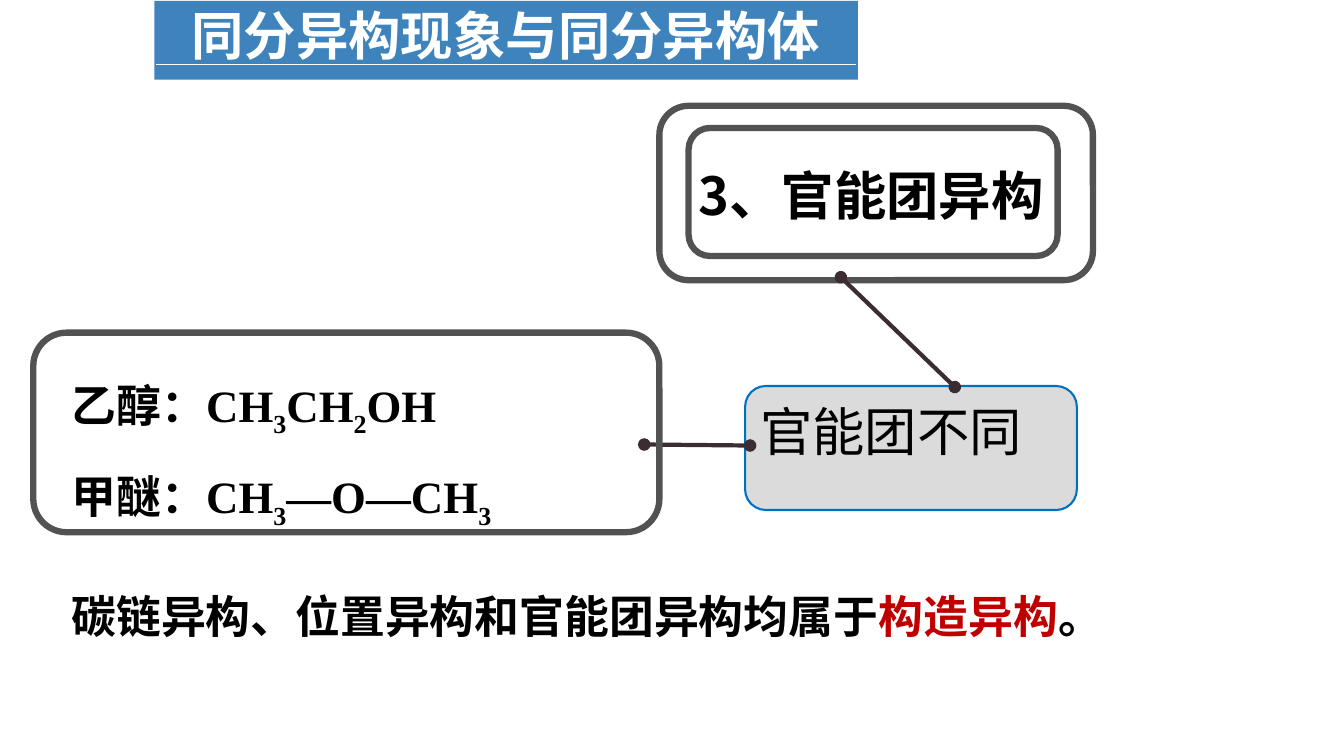
"""Build the slide on functional group isomers."""
import lxml.etree
import pptx
import pptx.dml.color
import pptx.enum.shapes
import pptx.enum.text
import pptx.oxml.ns
import pptx.util

Inches = pptx.util.Inches
Pt = pptx.util.Pt
RGBColor = pptx.dml.color.RGBColor
Shape = pptx.enum.shapes.MSO_SHAPE
Align = pptx.enum.text.PP_ALIGN
qn = pptx.oxml.ns.qn

BLUE = RGBColor(0x3F, 0x83, 0xBC)
EDGE = RGBColor(0x00, 0x70, 0xC0)
PALE = RGBColor(0xDB, 0xDB, 0xDB)
GRAY = RGBColor(0x52, 0x52, 0x52)
DARK = RGBColor(0x3B, 0x2D, 0x32)
RED = RGBColor(0xC0, 0x00, 0x00)
BLACK = RGBColor(0, 0, 0)
WHITE = RGBColor(255, 255, 255)
SANS = "Noto Sans CJK SC"
SERIF = "Times New Roman"


def place(item, left, top, width, height):
    item.left, item.top = Inches(left), Inches(top)
    item.width, item.height = Inches(width), Inches(height)


def write(para, text, size=32, font=SANS, color=BLACK, bold=True, sub=False):
    run = para.add_run()
    run.text = text
    run.font.size, run.font.bold = Pt(size), bold
    run.font.name, run.font.color.rgb = font, color
    props = run.font._element
    lxml.etree.SubElement(props, qn("a:ea")).set("typeface", SANS)
    if sub:
        props.set("baseline", "-25000")


def setup(frame, left=0.1, top=0.05):
    frame.word_wrap = True
    frame.auto_size = pptx.enum.text.MSO_AUTO_SIZE.NONE
    frame.vertical_anchor = pptx.enum.text.MSO_ANCHOR.TOP
    frame.margin_left, frame.margin_top = Inches(left), Inches(top)
    return frame.paragraphs[0]


def add_label(slide, area, *parts, **style):
    box = slide.shapes.add_textbox(0, 0, 0, 0)
    place(box, *area)
    para = setup(box.text_frame)
    for text, color in parts:
        write(para, text, color=color, **style)


def add_round(slide, area, fill=None, line=GRAY, width=4.5):
    box = slide.shapes.add_shape(Shape.ROUNDED_RECTANGLE, 0, 0, 0, 0)
    place(box, *area)
    box.shadow.inherit = False
    if fill is None:
        box.fill.background()
    else:
        box.fill.solid()
        box.fill.fore_color.rgb = fill
    box.line.color.rgb, box.line.width = line, Pt(width)
    return box


def add_line(slide, start, end, color=DARK, width=3, dots=True):
    ends = [Inches(value) for value in start + end]
    straight = pptx.enum.shapes.MSO_CONNECTOR.STRAIGHT
    link = slide.shapes.add_connector(straight, *ends)
    link.line.color.rgb, link.line.width = color, Pt(width)
    if dots:
        for tag in ("a:headEnd", "a:tailEnd"):
            tip = lxml.etree.SubElement(link.line._get_or_add_ln(), qn(tag))
            tip.set("type", "oval")
    lxml.etree.SubElement(link._element.spPr, qn("a:effectLst"))


def set_title(slide, text):
    title = slide.shapes.title
    place(title, 1.53, 0.01, 6.98, 0.78)
    title.fill.solid()
    title.fill.fore_color.rgb = BLUE
    para = setup(title.text_frame, top=0.02)
    para.alignment = Align.CENTER
    write(para, text, size=37.4, color=WHITE)
    add_line(slide, (1.55, 0.64), (8.49, 0.64), WHITE, 0.75, dots=False)


def set_list(slide, rows):
    body = slide.placeholders[1]
    place(body, 0.61, 3.39, 5.9, 1.72)
    frame = body.text_frame
    first = setup(frame)
    for index, row in enumerate(rows):
        para = frame.add_paragraph() if index else first
        para.line_spacing, para.space_before = 1.5, Pt(0)
        props = para._p.get_or_add_pPr()
        props.set("marL", "0")
        props.set("indent", "0")
        lxml.etree.SubElement(props, qn("a:buNone"))
        for text in row:
            write(para, text, font=SERIF, sub=text.isdigit())


def main():
    deck = pptx.Presentation()
    deck.slide_width, deck.slide_height = Inches(13.33), Inches(7.5)
    slide = deck.slides.add_slide(deck.slide_layouts[1])
    set_title(slide, "同分异构现象与同分异构体")
    set_list(slide, [("乙醇：CH", "3", "CH", "2", "OH"),
                     ("甲醚：CH", "3", "—O—CH", "3")])

    cause = add_round(slide, (7.39, 3.83, 3.29, 1.23), PALE, EDGE, 1.5)
    para = setup(cause.text_frame, left=0.09, top=0.07)
    para.alignment = Align.LEFT
    write(para, "官能团不同", size=37.4, bold=False)

    add_label(slide, (6.83, 1.57, 4, 0.73), ("3、官能团异构", BLACK), size=37.4)
    add_round(slide, (6.83, 1.27, 3.66, 1.27))
    add_line(slide, (6.39, 4.41), (7.44, 4.42))
    add_round(slide, (0.33, 3.3, 6.21, 1.98))
    add_round(slide, (6.54, 1.05, 4.3, 1.73))
    add_line(slide, (8.34, 2.75), (9.47, 3.84))
    add_label(slide, (0.61, 5.79, 11.87, 0.64),
              ("碳链异构、位置异构和官能团异构均属于", BLACK),
              ("构造异构", RED), ("。", BLACK))
    deck.save("out.pptx")


if __name__ == "__main__":
    main()
